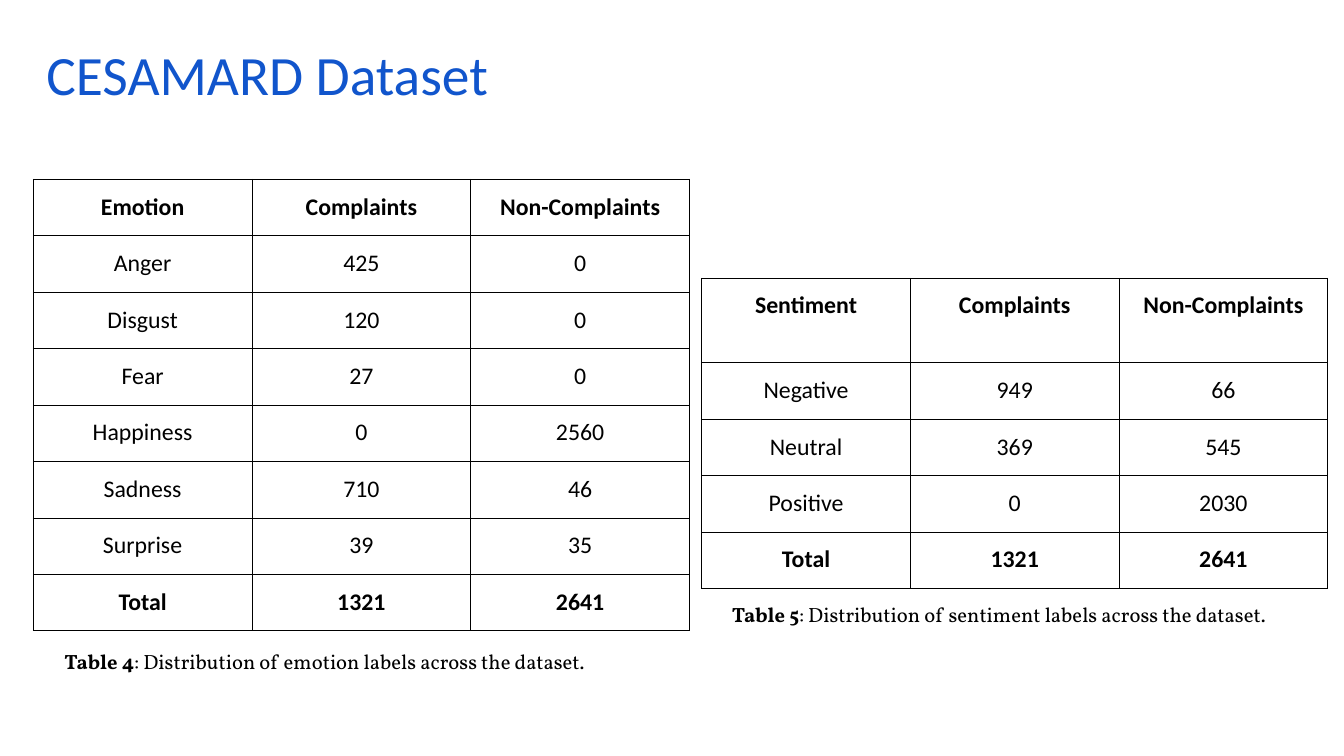
from dataclasses import dataclass

from lxml import etree
from pptx import Presentation
from pptx.dml.color import RGBColor
from pptx.enum.text import PP_ALIGN
from pptx.oxml.ns import qn
from pptx.slide import Slide
from pptx.table import _Cell
from pptx.text.text import _Paragraph
from pptx.util import Inches, Pt

LEFT, CENTER = PP_ALIGN.LEFT, PP_ALIGN.CENTER
BLACK, BLUE = "000000", "1155CC"
INSET = Inches(0.13)
BORDER = Pt(0.75)
ROW_HEIGHT = 0.56


@dataclass
class LabelTable:
    left: float
    top: float
    column_width: float
    header_height: float
    rows: list[tuple[str, str, str]]


@dataclass
class Caption:
    left: float
    top: float
    width: float
    number: str
    description: str


LABEL_TABLES = [
    LabelTable(0.33, 1.78, 2.17, ROW_HEIGHT, [
        ("Emotion", "Complaints", "Non-Complaints"),
        ("Anger", "425", "0"),
        ("Disgust", "120", "0"),
        ("Fear", "27", "0"),
        ("Happiness", "0", "2560"),
        ("Sadness", "710", "46"),
        ("Surprise", "39", "35"),
        ("Total", "1321", "2641"),
    ]),
    LabelTable(6.96, 2.76, 2.07, 0.84, [
        ("Sentiment", "Complaints", "Non-Complaints"),
        ("Negative", "949", "66"),
        ("Neutral", "369", "545"),
        ("Positive", "0", "2030"),
        ("Total", "1321", "2641"),
    ]),
]

CAPTIONS = [
    Caption(7.13, 5.85, 6.1, "Table 5",
            ": Distribution of sentiment labels across the dataset."),
    Caption(0.51, 6.31, 6.2, "Table 4",
            ": Distribution of emotion labels across the dataset."),
]


def color(value: str) -> RGBColor:
    return RGBColor.from_string(value)


def write(paragraph: _Paragraph, text: str, *, size: float, font: str = "Calibri",
          fill: str = BLACK, bold: bool = False, align: PP_ALIGN = LEFT) -> None:
    paragraph.alignment = align
    run = paragraph.add_run()
    run.text = text
    run.font.size = Pt(size)
    run.font.name = font
    run.font.bold = bold
    run.font.color.rgb = color(fill)


def add_text_area(slide: Slide, left: float, top: float, width: float,
                  height: float) -> _Paragraph:
    frame = slide.shapes.add_textbox(
        Inches(left), Inches(top), Inches(width), Inches(height)).text_frame
    frame.word_wrap = True
    frame.margin_left = frame.margin_right = INSET
    frame.margin_top = frame.margin_bottom = INSET
    return frame.paragraphs[0]


def style_cell(cell: _Cell) -> None:
    cell.margin_left = cell.margin_right = INSET
    cell.margin_top = cell.margin_bottom = INSET
    properties = cell._tc.get_or_add_tcPr()
    for side in ("a:lnL", "a:lnR", "a:lnT", "a:lnB"):
        line = etree.SubElement(properties, qn(side), w=str(BORDER))
        solid = etree.SubElement(line, qn("a:solidFill"))
        etree.SubElement(solid, qn("a:srgbClr"), val=BLACK)
    cell.fill.background()


def add_label_table(slide: Slide, labels: LabelTable) -> None:
    last = len(labels.rows) - 1
    columns = len(labels.rows[0])
    height = labels.header_height + last * ROW_HEIGHT
    table = slide.shapes.add_table(
        len(labels.rows), columns, Inches(labels.left), Inches(labels.top),
        Inches(columns * labels.column_width), Inches(height)).table
    table.horz_banding = False
    for column in table.columns:
        column.width = Inches(labels.column_width)
    for r, values in enumerate(labels.rows):
        table.rows[r].height = Inches(ROW_HEIGHT if r else labels.header_height)
        for c, value in enumerate(values):
            cell = table.cell(r, c)
            style_cell(cell)
            write(cell.text_frame.paragraphs[0], value, size=17,
                  bold=r in (0, last), align=CENTER)


def add_caption(slide: Slide, caption: Caption) -> None:
    paragraph = add_text_area(slide, caption.left, caption.top, caption.width, 0.52)
    write(paragraph, caption.number, size=14.7, font="Vollkorn", bold=True)
    write(paragraph, caption.description, size=14.7, font="Vollkorn")


def main() -> None:
    presentation = Presentation()
    presentation.slide_width = Inches(13.33)
    presentation.slide_height = Inches(7.5)
    slide = presentation.slides.add_slide(presentation.slide_layouts[6])

    title = add_text_area(slide, 0.33, 0.34, 12.42, 0.84)
    title.line_spacing = 0.9
    write(title, "CESAMARD Dataset", size=39.6, fill=BLUE)

    for caption in CAPTIONS:
        add_caption(slide, caption)
    for labels in LABEL_TABLES:
        add_label_table(slide, labels)

    presentation.save("out.pptx")


if __name__ == "__main__":
    main()
